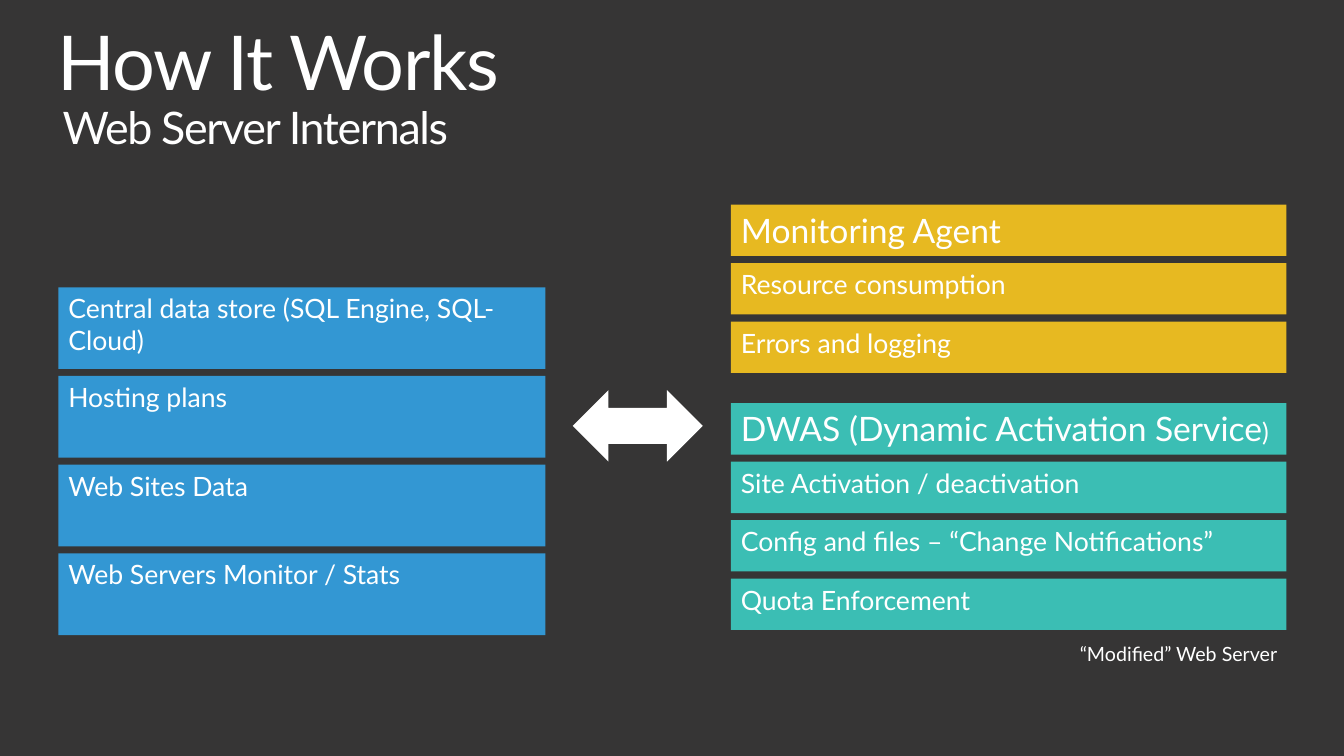
from pptx import Presentation
from pptx.dml.color import RGBColor
from pptx.enum.shapes import MSO_SHAPE
from pptx.enum.text import MSO_ANCHOR, MSO_AUTO_SIZE, PP_ALIGN
from pptx.util import Inches, Pt

FONT = "Lato"
WHITE, DARK = "FFFFFF", "363535"
BLUE, GOLD, TEAL = "3397D3", "E7B921", "3BBEB4"
GAP = 0.07

DATA_STORE = [
    [("Central data store (SQL Engine, SQL-Cloud)", 19)],
    [("Hosting plans", 19)],
    [("Web Sites Data", 19)],
    [("Web Servers Monitor / Stats", 19)],
]
MONITORING = [
    [("Monitoring Agent", 24)],
    [("Resource consumption", 19)],
    [("Errors and logging", 19)],
]
ACTIVATION = [
    [("DWAS (Dynamic Activation Service", 24), (")", 18)],
    [("Site Activation / deactivation", 19)],
    [("Config and files – “Change Notifications”", 19)],
    [("Quota Enforcement", 19)],
]


def colour(value):
    return RGBColor.from_string(value)


def write_spans(para, spans, spacing=None):
    """Add (text, size) spans to a left-aligned paragraph."""
    para.alignment = PP_ALIGN.LEFT
    for text, size in spans:
        span = para.add_run()
        span.text = text
        span.font.name = FONT
        span.font.size = Pt(size)
        span.font.color.rgb = colour(WHITE)
        if spacing is not None:
            span.font._element.set("spc", str(spacing))


def fill_line(shape, text, size, spacing=None):
    """Set one tight line of text without insets."""
    frame = shape.text_frame
    frame.word_wrap = True
    frame.auto_size = MSO_AUTO_SIZE.NONE
    frame.vertical_anchor = MSO_ANCHOR.TOP
    frame.margin_left = frame.margin_right = 0
    frame.margin_top = frame.margin_bottom = 0
    para = frame.paragraphs[0]
    para.line_spacing = 0.9
    write_spans(para, [(text, size)], spacing)


def add_plain_shape(page, kind, left, top, width, height, fill):
    shape = page.shapes.add_shape(
        kind, Inches(left), Inches(top), Inches(width), Inches(height))
    shape.shadow.inherit = False
    shape.fill.solid()
    shape.fill.fore_color.rgb = colour(fill)
    shape.line.fill.background()
    return shape


def add_text(page, left, top, width, height, text, size, spacing=None):
    box = page.shapes.add_textbox(
        Inches(left), Inches(top), Inches(width), Inches(height))
    fill_line(box, text, size, spacing)


def add_heading(page, left, top, width):
    """Large heading with the title placeholder beneath it."""
    add_text(page, left, top, width, 0.82, "How It Works", 54, -100)
    title = page.shapes.title
    title.left, title.top = Inches(left + 0.05), Inches(top + 0.8)
    title.width, title.height = Inches(5.88), Inches(0.48)
    fill_line(title, "Web Server Internals", 32, -100)


def add_stack(page, left, top, width, bar_height, fill, rows):
    """Column of equal bars, one per row of spans."""
    for index, spans in enumerate(rows):
        bar_top = top + index * (bar_height + GAP)
        bar = add_plain_shape(page, MSO_SHAPE.RECTANGLE, left, bar_top,
                              width, bar_height, fill)
        bar.text_frame.word_wrap = True
        bar.text_frame.vertical_anchor = MSO_ANCHOR.TOP
        write_spans(bar.text_frame.paragraphs[0], spans)


def add_web_server(page, left, top, width):
    """Monitoring and activation stacks with their caption."""
    add_stack(page, left, top, width, 0.51, GOLD, MONITORING)
    add_stack(page, left, top + 1.97, width, 0.51, TEAL, ACTIVATION)
    add_text(page, left + width - 2.05, top + 4.36, 2.05, 0.21,
             "“Modified” Web Server", 14)


def main():
    deck = Presentation()
    deck.slide_width, deck.slide_height = Inches(13.33), Inches(7.5)
    page = deck.slides.add_slide(deck.slide_layouts.get_by_name("Title Only"))
    page.background.fill.solid()
    page.background.fill.fore_color.rgb = colour(DARK)

    add_heading(page, 0.57, 0.25, 12.19)
    add_stack(page, 0.58, 2.85, 4.83, 0.81, BLUE, DATA_STORE)
    add_plain_shape(page, MSO_SHAPE.LEFT_RIGHT_ARROW, 5.68, 3.87, 1.29, 0.71, WHITE)
    add_web_server(page, 7.25, 2.03, 5.51)
    deck.save("out.pptx")


if __name__ == "__main__":
    main()
